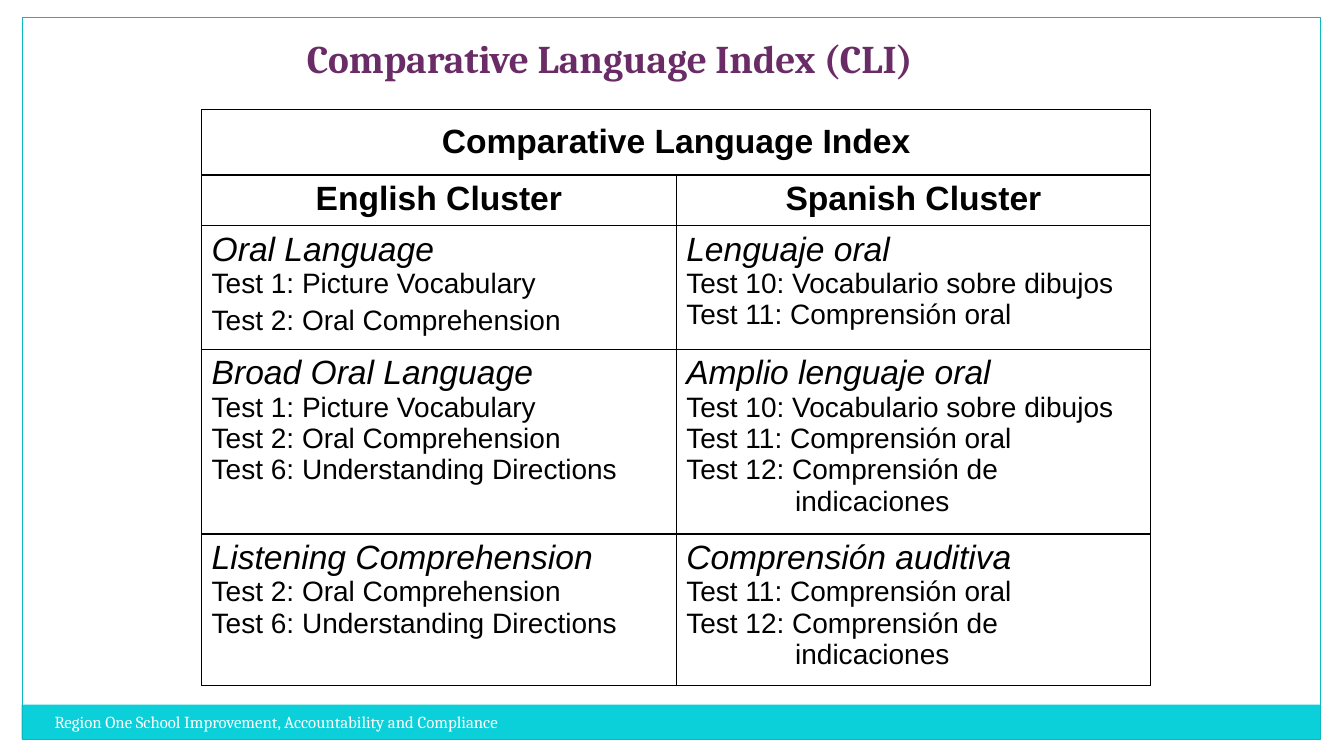
from dataclasses import dataclass

from lxml import etree
from pptx import Presentation
from pptx.dml.color import RGBColor
from pptx.enum.shapes import MSO_SHAPE
from pptx.enum.text import MSO_ANCHOR, MSO_AUTO_SIZE, PP_ALIGN
from pptx.oxml.ns import qn
from pptx.util import Inches, Pt

RECTANGLE = MSO_SHAPE.RECTANGLE
MIDDLE, TOP = MSO_ANCHOR.MIDDLE, MSO_ANCHOR.TOP
CENTER, LEFT = PP_ALIGN.CENTER, PP_ALIGN.LEFT
NO_AUTOFIT = MSO_AUTO_SIZE.NONE

SLIDE_WIDTH, SLIDE_HEIGHT = Inches(13.33), Inches(7.5)
TITLE_ONLY_LAYOUT = 5


@dataclass(frozen=True)
class Theme:
    title: str = "6A2C66"
    band: str = "0BD0D9"
    frame: str = "0AB8BF"
    ink: str = "000000"
    paper: str = "FFFFFF"
    heading_font: str = "Cambria"
    body_font: str = "Arial"
    title_size: int = 28
    cluster_size: int = 24
    test_size: int = 20
    footer_size: int = 12
    frame_width: float = 0.75
    border_width: float = 1


THEME = Theme()


@dataclass(frozen=True)
class Area:
    """Percentages of the slide's width and height."""

    left: float
    top: float
    width: float
    height: float

    def box(self) -> tuple:
        return (across(self.left), down(self.top), across(self.width), down(self.height))


@dataclass(frozen=True)
class Panel:
    area: Area
    fill: str | None = None
    line: str | None = None


@dataclass(frozen=True)
class Line:
    text: str
    size: int = THEME.test_size
    font: str = THEME.body_font
    color: str = THEME.ink
    bold: bool = False
    italic: bool = False
    align: PP_ALIGN = LEFT
    space_before: float = 0
    indent: float = 0


def across(percent: float) -> int:
    return round(SLIDE_WIDTH * percent / 100)


def down(percent: float) -> int:
    return round(SLIDE_HEIGHT * percent / 100)


def heading(text: str) -> list[Line]:
    return [Line(text, THEME.cluster_size, bold=True, align=CENTER)]


def cluster(name: str, *tests: str | Line) -> list[Line]:
    lines = [test if isinstance(test, Line) else Line(test) for test in tests]
    return [Line(name, THEME.cluster_size, italic=True), *lines]


TITLE_AREA = Area(22.08, 2.27, 56.04, 10.8)
TABLE_AREA = Area(15, 14.47, 70.62, 76.17)
FOOTER_AREA = Area(3.32, 93.47, 39.16, 5.33)
ROW_HEIGHTS = [8.67, 6.7, 16.4, 24.4, 20]

PANELS = [
    Panel(Area(0, 0, 100, 2.27), fill=THEME.paper),
    Panel(Area(98.35, 0, 1.65, 100), fill=THEME.paper),
    Panel(Area(0, 0, 1.65, 100), fill=THEME.paper),
    Panel(Area(1.6, 93.22, 96.64, 4.55), fill=THEME.band),
    Panel(Area(1.65, 2.27, 96.62, 95.5), line=THEME.frame),
]

TITLE = Line("Comparative Language Index (CLI)", THEME.title_size,
             THEME.heading_font, THEME.title, bold=True)
FOOTER = Line("Region One School Improvement, Accountability and Compliance",
              THEME.footer_size, THEME.heading_font, THEME.paper)

VOCABULARY = "Test 1: Picture Vocabulary"
COMPREHENSION = "Test 2: Oral Comprehension"
DIRECTIONS = "Test 6: Understanding Directions"
VOCABULARIO = "Test 10: Vocabulario sobre dibujos"
COMPRENSION = "Test 11: Comprensión oral"
INDICACIONES = ("Test 12: Comprensión de", Line("indicaciones", indent=1.08))

CLUSTER_ROWS = [
    [heading("Comparative Language Index")],
    [heading("English Cluster"), heading("Spanish Cluster")],
    [cluster("Oral Language", VOCABULARY, Line(COMPREHENSION, space_before=4)),
     cluster("Lenguaje oral", VOCABULARIO, COMPRENSION)],
    [cluster("Broad Oral Language", VOCABULARY, COMPREHENSION, DIRECTIONS),
     cluster("Amplio lenguaje oral", VOCABULARIO, COMPRENSION, *INDICACIONES)],
    [cluster("Listening Comprehension", COMPREHENSION, DIRECTIONS),
     cluster("Comprensión auditiva", COMPRENSION, *INDICACIONES)],
]


def apply_format(target, values: dict) -> None:
    for name, value in values.items():
        setattr(target, name, value)


def write_lines(text_frame, lines: list[Line]) -> None:
    for index, line in enumerate(lines):
        paragraph = text_frame.add_paragraph() if index else text_frame.paragraphs[0]
        apply_format(paragraph, {"alignment": line.align,
                                 "space_before": Pt(line.space_before)})
        if line.indent:
            properties = paragraph._p.get_or_add_pPr()
            properties.set("marL", str(Inches(line.indent)))
            properties.set("indent", "0")
        run = paragraph.add_run()
        run.text = line.text
        apply_format(run.font, {"name": line.font, "size": Pt(line.size),
                                "bold": line.bold, "italic": line.italic})
        run.font.color.rgb = RGBColor.from_string(line.color)


def add_panel(slide, panel: Panel) -> None:
    shape = slide.shapes.add_shape(RECTANGLE, *panel.area.box())
    shape.shadow.inherit = False
    if panel.fill:
        shape.fill.solid()
        shape.fill.fore_color.rgb = RGBColor.from_string(panel.fill)
    else:
        shape.fill.background()
    if panel.line:
        shape.line.color.rgb = RGBColor.from_string(panel.line)
        shape.line.width = Pt(THEME.frame_width)
    else:
        shape.line.fill.background()


def add_borders(cell) -> None:
    properties = cell._tc.get_or_add_tcPr()
    for index, side in enumerate(("a:lnL", "a:lnR", "a:lnT", "a:lnB")):
        border = etree.Element(qn(side), w=str(Pt(THEME.border_width)))
        fill = etree.SubElement(border, qn("a:solidFill"))
        etree.SubElement(fill, qn("a:srgbClr"), val=THEME.ink)
        properties.insert(index, border)


def add_cluster_table(slide) -> None:
    column_count = max(len(row) for row in CLUSTER_ROWS)
    table = slide.shapes.add_table(len(CLUSTER_ROWS), column_count, *TABLE_AREA.box()).table
    apply_format(table, {"first_row": False, "horz_banding": False})
    for row, height in zip(table.rows, ROW_HEIGHTS):
        row.height = down(height)
    for column in table.columns:
        column.width = across(TABLE_AREA.width / column_count)
    for cell in table.iter_cells():
        cell.fill.background()
        add_borders(cell)
    table.cell(0, 0).merge(table.cell(0, column_count - 1))
    for row_index, row in enumerate(CLUSTER_ROWS):
        for column_index, lines in enumerate(row):
            cell = table.cell(row_index, column_index)
            cell.vertical_anchor = TOP if row_index else MIDDLE
            write_lines(cell.text_frame, lines)


def main() -> None:
    presentation = Presentation()
    apply_format(presentation, {"slide_width": SLIDE_WIDTH, "slide_height": SLIDE_HEIGHT})
    slide = presentation.slides.add_slide(presentation.slide_layouts[TITLE_ONLY_LAYOUT])

    for panel in PANELS:
        add_panel(slide, panel)

    title = slide.shapes.title
    apply_format(title, dict(zip(("left", "top", "width", "height"), TITLE_AREA.box())))
    apply_format(title.text_frame, {"auto_size": NO_AUTOFIT, "vertical_anchor": MIDDLE,
                                    "word_wrap": True})
    write_lines(title.text_frame, [TITLE])

    add_cluster_table(slide)

    footer = slide.shapes.add_textbox(*FOOTER_AREA.box())
    footer.text_frame.word_wrap = True
    write_lines(footer.text_frame, [FOOTER])

    presentation.save("out.pptx")


if __name__ == "__main__":
    main()
